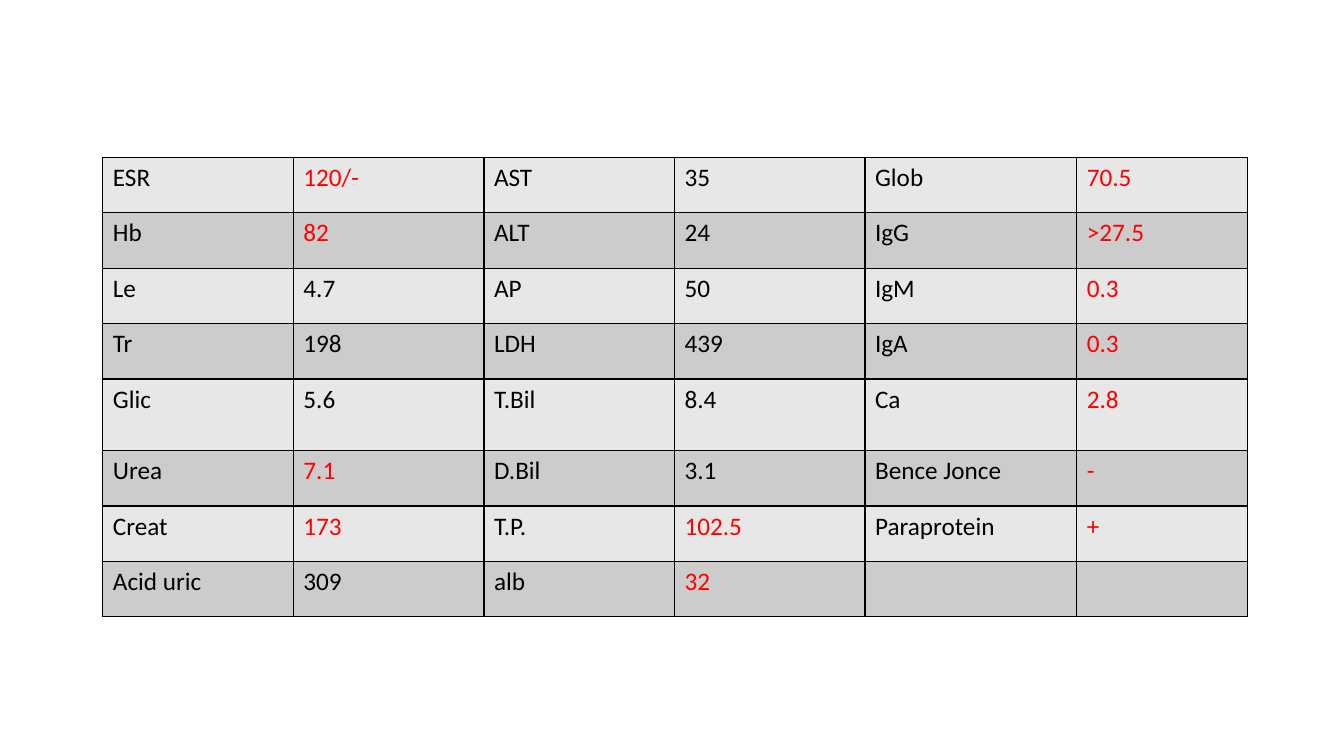
"""Builds a slide with a table of laboratory results, abnormal values in red."""
import pptx
import pptx.dml.color
import pptx.oxml
import pptx.oxml.ns
import pptx.util
from pptx.util import Inches

RESULTS = [
    ("ESR", "120/-", "AST", "35", "Glob", "70.5"),
    ("Hb", "82", "ALT", "24", "IgG", ">27.5"),
    ("Le", "4.7", "AP", "50", "IgM", "0.3"),
    ("Tr", "198", "LDH", "439", "IgA", "0.3"),
    ("Glic", "5.6", "T.Bil", "8.4", "Ca", "2.8"),
    ("Urea", "7.1", "D.Bil", "3.1", "Bence Jonce", "-"),
    ("Creat", "173", "T.P.", "102.5", "Paraprotein", "+"),
    ("Acid uric", "309", "alb", "32", "", ""),
]
ABNORMAL = {"ESR", "Hb", "Urea", "Creat", "T.P.", "alb", "Glob", "IgG", "IgM",
            "IgA", "Ca", "Bence Jonce", "Paraprotein"}
COLUMN_WIDTHS = [1.89, 1.89, 1.89, 1.89, 2.1, 1.69]
ROW_HEIGHTS = [0.55] * 4 + [0.71] + [0.55] * 3


def color(value):
    """Turn a hex string into a colour."""
    return pptx.dml.color.RGBColor.from_string(value)


class LabSlide:
    """Holds the style and the slide being filled."""

    font, size = "Calibri", 18
    normal, abnormal, border = "000000", "FF0000", "000000"
    bands = ("E7E7E7", "CCCCCC")

    def __init__(self, slide):
        """Keep the slide to draw on."""
        self.slide = slide

    def outline(self, cell):
        """Draw a thin line on all four sides of a cell."""
        properties = cell._tc.get_or_add_tcPr()
        for side in "LRTB":
            properties.append(pptx.oxml.parse_xml(
                f'<a:ln{side} {pptx.oxml.ns.nsdecls("a")} w="12700"><a:solidFill>'
                f'<a:srgbClr val="{self.border}"/></a:solidFill></a:ln{side}>'))

    def cell(self, cell, text, text_color, fill):
        """Style one cell and write its text."""
        self.outline(cell)
        cell.fill.solid()
        cell.fill.fore_color.rgb = color(fill)
        cell.text_frame.text = text
        font = cell.text_frame.paragraphs[0].font
        for run in cell.text_frame.paragraphs[0].runs:
            font = run.font
        font.name = self.font
        font.size = pptx.util.Pt(self.size)
        font.color.rgb = color(text_color)

    def table(self, left, top, widths, heights, results):
        """Add the table of label and value pairs."""
        table = self.slide.shapes.add_table(
            len(heights), len(widths), Inches(left), Inches(top),
            Inches(sum(widths)), Inches(sum(heights))).table
        for column, width in zip(table.columns, widths):
            column.width = Inches(width)
        for row, height in zip(table.rows, heights):
            row.height = Inches(height)
        for r, result in enumerate(results):
            for c, text in enumerate(result):
                flagged = c % 2 == 1 and result[c - 1] in ABNORMAL
                self.cell(table.cell(r, c), text,
                          self.abnormal if flagged else self.normal,
                          self.bands[r % 2])


def main():
    """Build and save the presentation."""
    presentation = pptx.Presentation()
    presentation.slide_width = Inches(13.33)
    presentation.slide_height = Inches(7.5)
    page = LabSlide(presentation.slides.add_slide(presentation.slide_layouts[6]))
    page.table(1.02, 1.56, COLUMN_WIDTHS, ROW_HEIGHTS, RESULTS)
    presentation.save("out.pptx")


if __name__ == "__main__":
    main()
